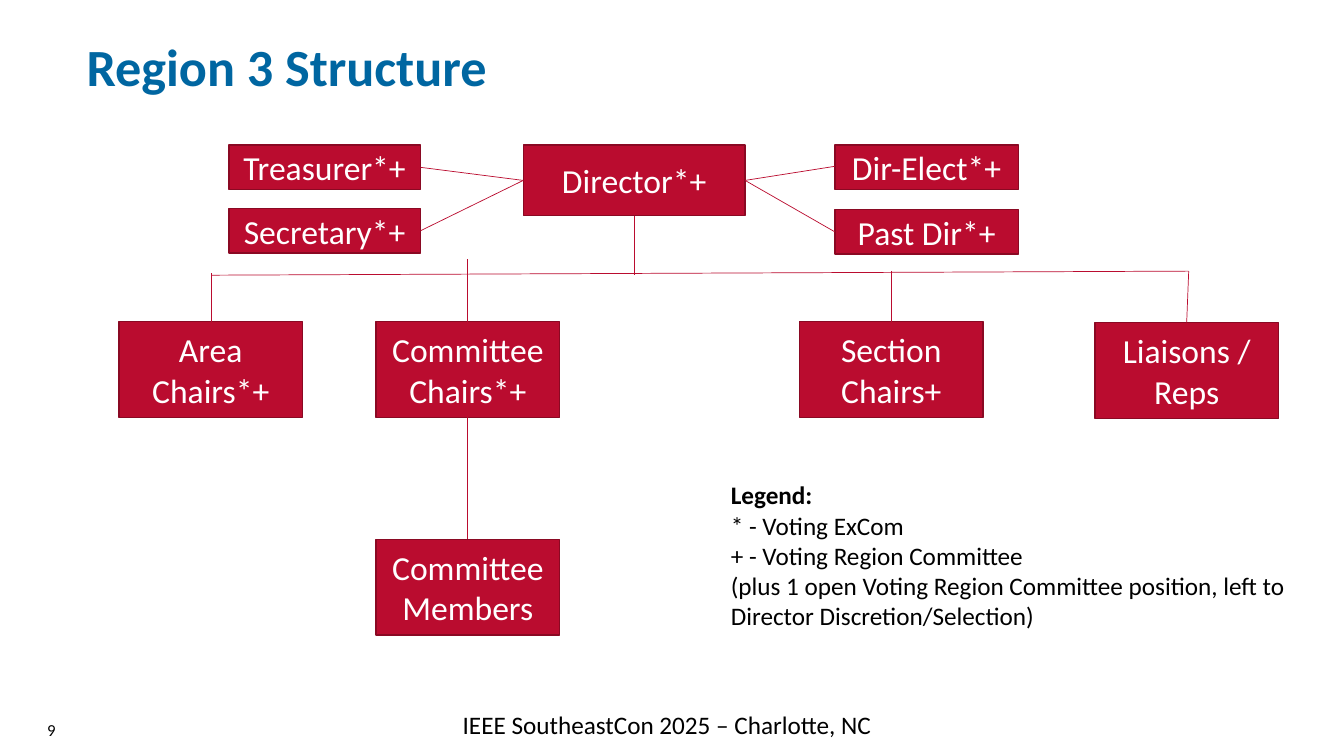
from pptx import Presentation
from pptx.util import Inches, Pt
from pptx.dml.color import RGBColor
from pptx.enum.shapes import MSO_CONNECTOR, MSO_SHAPE
from pptx.enum.text import MSO_ANCHOR, PP_ALIGN
from pptx.oxml.ns import qn
from lxml import etree

RECT, STRAIGHT = MSO_SHAPE.RECTANGLE, MSO_CONNECTOR.STRAIGHT
MIDDLE, CENTER = MSO_ANCHOR.MIDDLE, PP_ALIGN.CENTER
COLORS = {"red": "BA0C2F", "border": "8A0923", "title": "0066A1",
          "text": "000000", "white": "FFFFFF"}


def rgb(name):
    return RGBColor.from_string(COLORS[name])


def write(sp, lines, size, color="text", align=None, wrap=True):
    tf = sp.text_frame
    tf.word_wrap = wrap
    for i, line in enumerate(lines):
        p = tf.paragraphs[0] if i == 0 else tf.add_paragraph()
        p.text = line
        p.font.name, p.font.size = "Calibri", Pt(size)
        p.font.color.rgb = rgb(color)
        if align is not None:
            p.alignment = align
    return tf


prs = Presentation()
prs.slide_width, prs.slide_height = Inches(13.33), Inches(7.5)
s = prs.slides.add_slide(prs.slide_layouts[6])

# Footer and slide number
sp = s.shapes.add_textbox(Inches(4.49), Inches(6.99), Inches(4.31), Inches(0.4))
write(sp, ["IEEE SoutheastCon 2025 – Charlotte, NC"], 18, wrap=False)

sp = s.shapes.add_textbox(Inches(0.2), Inches(6.99), Inches(0.62), Inches(0.49))
tf = write(sp, ["9"], 12, align=CENTER)
tf.vertical_anchor = MIDDLE
tf.margin_left = tf.margin_right = Inches(0.13)
tf.margin_top = tf.margin_bottom = Inches(0.07)

# Title
sp = s.shapes.add_textbox(Inches(0.76), Inches(0.36), Inches(12.18), Inches(0.88))
p = write(sp, ["Region 3 Structure"], 37.3, "title").paragraphs[0]
p.font.bold = True
p.line_spacing = 0.9

# Organization boxes: label, left, top, width, height
boxes = [
    ("Director*+", 5.19, 1.44, 2.2, 0.7),
    ("Dir-Elect*+", 8.28, 1.44, 1.82, 0.44),
    ("Past Dir*+", 8.28, 2.08, 1.82, 0.44),
    ("Secretary*+", 2.27, 2.07, 1.9, 0.44),
    ("Treasurer*+", 2.27, 1.44, 1.9, 0.44),
    ("Area Chairs*+", 1.18, 3.19, 1.82, 0.95),
    ("Committee Chairs*+", 3.73, 3.19, 1.82, 0.95),
    ("Committee Members", 3.73, 5.35, 1.82, 0.95),
    ("Section Chairs+", 7.93, 3.19, 1.82, 0.95),
    ("Liaisons / Reps", 10.86, 3.2, 1.82, 0.95),
]
for label, *frame in boxes:
    sp = s.shapes.add_shape(RECT, *map(Inches, frame))
    sp.shadow.inherit = False
    sp.fill.solid()
    sp.fill.fore_color.rgb = rgb("red")
    sp.line.color.rgb = rgb("border")
    sp.line.width = Pt(1)
    write(sp, [label], 24, "white", CENTER).vertical_anchor = MIDDLE

# Connecting lines: x1, y1, x2, y2
lines = [
    (6.29, 2.14, 6.29, 2.73),    # director to bus
    (2.1, 2.73, 11.79, 2.69),    # bus
    (11.79, 2.69, 11.77, 3.2),   # liaisons
    (8.84, 3.19, 8.84, 2.69),    # section chairs
    (4.64, 3.19, 4.64, 2.57),    # committee chairs
    (2.1, 3.19, 2.1, 2.71),      # area chairs
    (5.19, 1.79, 4.17, 1.66),    # treasurer
    (5.19, 1.79, 4.17, 2.29),    # secretary
    (7.39, 1.79, 8.28, 1.65),    # director-elect
    (7.39, 1.79, 8.28, 2.3),     # past director
    (4.64, 4.14, 4.64, 5.35),    # committee members
]
for ends in lines:
    line = s.shapes.add_connector(STRAIGHT, *map(Inches, ends))
    line.line.color.rgb = rgb("red")
    line.line.width = Pt(0.5)
    etree.SubElement(line._element.spPr, qn("a:effectLst"))

# Legend
sp = s.shapes.add_textbox(Inches(7.15), Inches(4.71), Inches(6.05), Inches(1.62))
tf = write(sp, [
    "Legend:",
    "* - Voting ExCom",
    "+ - Voting Region Committee",
    "(plus 1 open Voting Region Committee position, left to Director Discretion/Selection)",
], 18)
tf.paragraphs[0].font.bold = True

prs.save("out.pptx")
